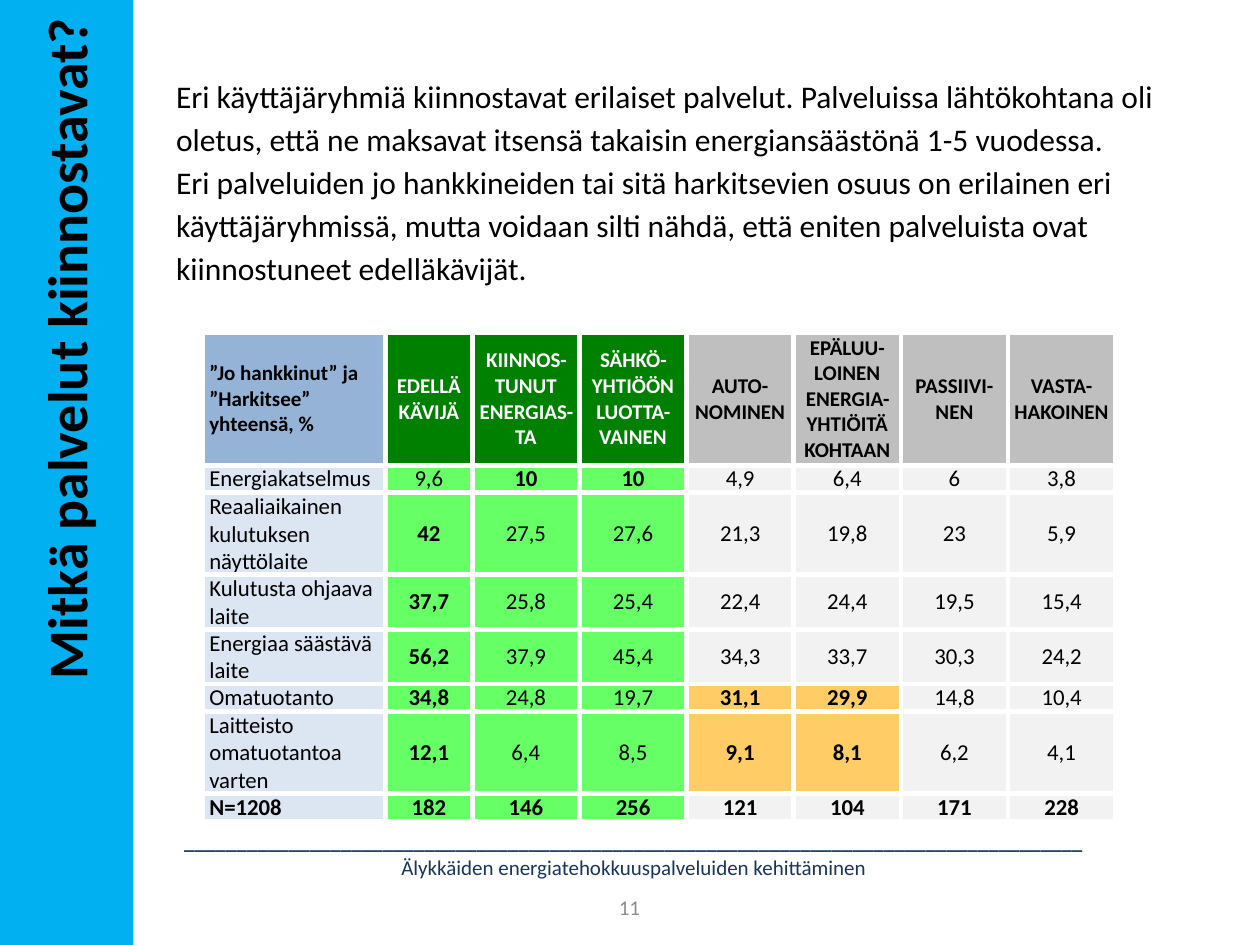
from dataclasses import dataclass

import lxml.etree
import pptx
import pptx.dml.color
import pptx.enum.shapes
import pptx.enum.text
import pptx.oxml.ns
import pptx.slide
import pptx.table
import pptx.text.text
import pptx.util

Cm = pptx.util.Cm
RGBColor = pptx.dml.color.RGBColor
ALIGN = pptx.enum.text.PP_ALIGN
ANCHOR = pptx.enum.text.MSO_ANCHOR

FONT = "Calibri"
BLACK = RGBColor(0x00, 0x00, 0x00)
WHITE = RGBColor(0xFF, 0xFF, 0xFF)
SKY = RGBColor(0x00, 0xB0, 0xF0)
NAVY = RGBColor(0x17, 0x36, 0x5D)
NUMBER_GREY = RGBColor(0x8C, 0x8C, 0x8C)
CORNER_BLUE = RGBColor(0x95, 0xB3, 0xD7)
LABEL_BLUE = RGBColor(0xDC, 0xE6, 0xF2)
DARK_GREEN = RGBColor(0x00, 0x80, 0x00)
LIGHT_GREEN = RGBColor(0x66, 0xFF, 0x66)
HEADER_GREY = RGBColor(0xBF, 0xBF, 0xBF)
CELL_GREY = RGBColor(0xF2, 0xF2, 0xF2)
ORANGE = RGBColor(0xFF, 0xCC, 0x66)

LAST_GREEN_COLUMN = 3
COLUMN_WIDTHS = [3.68, 1.75] + [2.16] * 6
HEADER_HEIGHT = 2.67
LINE_HEIGHT = 0.53
HEADERS = [
    "”Jo hankkinut” ja ”Harkitsee” yhteensä, %",
    "EDELLÄKÄVIJÄ",
    "KIINNOS-TUNUT ENERGIAS-TA",
    "SÄHKÖ-YHTIÖÖN LUOTTA-VAINEN",
    "AUTO-NOMINEN",
    "EPÄLUU-LOINEN ENERGIA-YHTIÖITÄ KOHTAAN",
    "PASSIIVI-NEN",
    "VASTA-HAKOINEN",
]


@dataclass(frozen=True)
class ServiceRow:
    label: str
    lines: int
    values: str
    bold_columns: tuple[int, ...]
    total: bool = False


SERVICES = [
    ServiceRow("Energiakatselmus", 1, "9,6 10 10 4,9 6,4 6 3,8", (2, 3)),
    ServiceRow("Reaaliaikainen kulutuksen näyttölaite", 3, "42 27,5 27,6 21,3 19,8 23 5,9", (1,)),
    ServiceRow("Kulutusta ohjaava laite", 2, "37,7 25,8 25,4 22,4 24,4 19,5 15,4", (1,)),
    ServiceRow("Energiaa säästävä laite", 2, "56,2 37,9 45,4 34,3 33,7 30,3 24,2", (1,)),
    ServiceRow("Omatuotanto", 1, "34,8 24,8 19,7 31,1 29,9 14,8 10,4", (1, 4, 5)),
    ServiceRow("Laitteisto omatuotantoa varten", 3, "12,1 6,4 8,5 9,1 8,1 6,2 4,1", (1, 4, 5)),
    ServiceRow("N=1208", 1, "182 146 256 121 104 171 228", tuple(range(8)), total=True),
]


@dataclass(frozen=True)
class TextStyle:
    size: int
    color: RGBColor = BLACK
    bold: bool = False
    align: ALIGN = ALIGN.LEFT


@dataclass(frozen=True)
class TextBlock:
    left: float
    top: float
    width: float
    height: float
    text: str
    style: TextStyle
    anchor: ANCHOR = ANCHOR.MIDDLE
    line_spacing: float = 1.0


FOOTER = TextBlock(0.08, 15.52, 25.4, 3.4,
                   "_" * 86 + "\nÄlykkäiden energiatehokkuuspalveluiden kehittäminen",
                   TextStyle(12, NAVY, align=ALIGN.CENTER))
PAGE_NUMBER = TextBlock(9.73, 17.78, 5.92, 1.02, "11",
                        TextStyle(12, NUMBER_GREY, align=ALIGN.CENTER))
INTRODUCTION = TextBlock(
    3.3, 1.32, 21.59, 4.65,
    "Eri käyttäjäryhmiä kiinnostavat erilaiset palvelut. Palveluissa lähtökohtana oli "
    "oletus, että ne maksavat itsensä takaisin energiansäästönä 1-5 vuodessa.\n"
    "Eri palveluiden jo hankkineiden tai sitä harkitsevien osuus on erilainen eri "
    "käyttäjäryhmissä, mutta voidaan silti nähdä, että eniten palveluista ovat "
    "kiinnostuneet edelläkävijät.",
    TextStyle(18), ANCHOR.TOP, 1.14)


def write_text(frame: pptx.text.text.TextFrame, text: str, style: TextStyle) -> None:
    frame.text = text
    for para in frame.paragraphs:
        para.alignment = style.align
        for span in para.runs:
            span.font.name = FONT
            span.font.size = pptx.util.Pt(style.size)
            span.font.bold = style.bold
            span.font.color.rgb = style.color


def add_text(page: pptx.slide.Slide, block: TextBlock) -> pptx.text.text.TextFrame:
    box = page.shapes.add_textbox(Cm(block.left), Cm(block.top), Cm(block.width), Cm(block.height))
    frame = box.text_frame
    frame.word_wrap = True
    frame.vertical_anchor = block.anchor
    write_text(frame, block.text, block.style)
    for para in frame.paragraphs:
        para.line_spacing = block.line_spacing
    return frame


def add_band(page: pptx.slide.Slide, height: int) -> None:
    band = page.shapes.add_shape(pptx.enum.shapes.MSO_SHAPE.RECTANGLE, 0, 0, Cm(2.69), height)
    band.shadow.inherit = False
    band.fill.solid()
    band.fill.fore_color.rgb = SKY
    band.line.fill.background()


def place_title(page: pptx.slide.Slide) -> None:
    title = page.shapes.title
    title.left, title.top, title.width, title.height = Cm(-8.15), Cm(8.18), Cm(18.92), Cm(2.79)
    title.rotation = 270
    frame = title.text_frame
    frame.auto_size = pptx.enum.text.MSO_AUTO_SIZE.NONE
    frame.vertical_anchor = ANCHOR.MIDDLE
    write_text(frame, "Mitkä palvelut kiinnostavat?", TextStyle(32, bold=True, align=ALIGN.RIGHT))
    title.element.getparent().append(title.element)


def add_borders(cell: pptx.table._Cell) -> None:
    qn = pptx.oxml.ns.qn
    properties = cell._tc.get_or_add_tcPr()
    for position, side in enumerate(("a:lnL", "a:lnR", "a:lnT", "a:lnB")):
        border = lxml.etree.Element(qn(side), w=str(pptx.util.Pt(3)))
        fill = lxml.etree.SubElement(border, qn("a:solidFill"))
        lxml.etree.SubElement(fill, qn("a:srgbClr"), val=str(WHITE))
        properties.insert(position, border)


def fill_cell(cell: pptx.table._Cell, text: str, fill: RGBColor, style: TextStyle) -> None:
    cell.margin_left = cell.margin_right = Cm(0.13)
    cell.margin_top = cell.margin_bottom = 0
    cell.vertical_anchor = ANCHOR.MIDDLE
    cell.fill.solid()
    cell.fill.fore_color.rgb = fill
    write_text(cell.text_frame, text, style)
    add_borders(cell)


def cell_align(column: int) -> ALIGN:
    return ALIGN.CENTER if column else ALIGN.LEFT


def header_fill(column: int) -> RGBColor:
    if column == 0:
        return CORNER_BLUE
    return DARK_GREEN if column <= LAST_GREEN_COLUMN else HEADER_GREY


def value_fill(service: ServiceRow, column: int) -> RGBColor:
    if column == 0:
        return LABEL_BLUE
    if column <= LAST_GREEN_COLUMN:
        return LIGHT_GREEN
    highlighted = column in service.bold_columns and not service.total
    return ORANGE if highlighted else CELL_GREY


def add_service_table(page: pptx.slide.Slide) -> None:
    heights = [HEADER_HEIGHT] + [service.lines * LINE_HEIGHT for service in SERVICES]
    table = page.shapes.add_table(len(heights), len(HEADERS), Cm(4.09), Cm(6.71),
                                  Cm(sum(COLUMN_WIDTHS)), Cm(sum(heights))).table
    for column, width in zip(table.columns, COLUMN_WIDTHS):
        column.width = Cm(width)
    for row, height in zip(table.rows, heights):
        row.height = Cm(height)
    for column, text in enumerate(HEADERS):
        fill = header_fill(column)
        color = WHITE if fill == DARK_GREEN else BLACK
        fill_cell(table.cell(0, column), text, fill, TextStyle(12, color, True, cell_align(column)))
    for row, service in enumerate(SERVICES, start=1):
        for column, text in enumerate([service.label, *service.values.split()]):
            style = TextStyle(13, bold=column in service.bold_columns, align=cell_align(column))
            fill_cell(table.cell(row, column), text, value_fill(service, column), style)


def main() -> None:
    deck = pptx.Presentation()
    deck.slide_width, deck.slide_height = Cm(25.4), Cm(19.05)
    page = deck.slides.add_slide(deck.slide_layouts.get_by_name("Title Only"))
    add_band(page, deck.slide_height)
    footer = add_text(page, FOOTER)
    footer.paragraphs[0].runs[0].font.bold = True
    add_text(page, PAGE_NUMBER)
    add_service_table(page)
    add_text(page, INTRODUCTION)
    place_title(page)
    deck.save("out.pptx")


if __name__ == "__main__":
    main()
